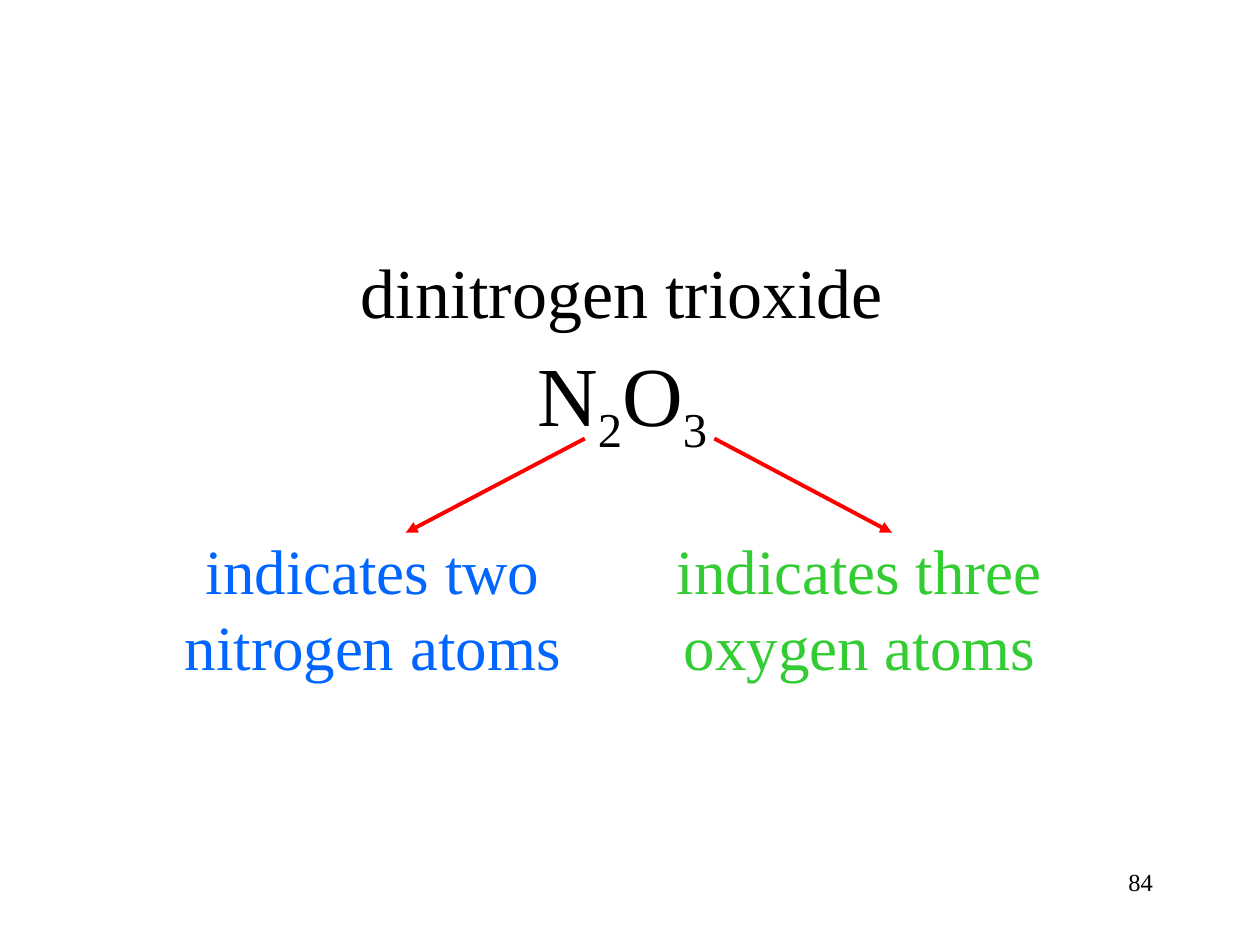
from dataclasses import dataclass

from lxml.etree import SubElement
from pptx import Presentation
from pptx.dml.color import RGBColor
from pptx.enum.shapes import MSO_CONNECTOR
from pptx.enum.text import PP_ALIGN
from pptx.oxml.ns import qn
from pptx.util import Cm, Pt

BLACK, BLUE, GREEN, RED = "000000", "0066FF", "33CC33", "FF0000"


@dataclass
class Label:
    text: str
    left: float
    top: float
    width: float
    height: float
    size: int
    color: str = BLACK
    align: PP_ALIGN = PP_ALIGN.CENTER


@dataclass
class Arrow:
    x1: float
    y1: float
    x2: float
    y2: float


def paint(part, color: str) -> None:
    part.rgb = RGBColor.from_string(color)


def add_label(slide, label: Label):
    box = slide.shapes.add_textbox(
        Cm(label.left), Cm(label.top), Cm(label.width), Cm(label.height))
    frame = box.text_frame
    frame.word_wrap = True
    line = frame.paragraphs[0]
    line.text = label.text
    line.alignment = label.align
    for run in line.runs:
        style(run, label)
    return line


def style(run, label: Label) -> None:
    run.font.name = "Times New Roman"
    run.font.size = Pt(label.size)
    paint(run.font.color, label.color)


def add_formula(slide, label: Label) -> None:
    """Draw a chemical formula with its digits as subscripts."""
    line = add_label(slide, label)
    line.text = ""
    for sign in label.text:
        run = line.add_run()
        run.text = sign
        style(run, label)
        if sign.isdigit():
            run.font._element.set("baseline", "-25000")


def add_arrow(slide, arrow: Arrow) -> None:
    link = slide.shapes.add_connector(
        MSO_CONNECTOR.STRAIGHT,
        Cm(arrow.x1), Cm(arrow.y1), Cm(arrow.x2), Cm(arrow.y2))
    link.line.width = Pt(2.25)
    paint(link.line.color, RED)
    SubElement(link.line._get_or_add_ln(), qn("a:tailEnd"), type="triangle")
    SubElement(link._element.spPr, qn("a:effectLst"))


# Compound name, meaning of each subscript, page number
LABELS = [
    Label("dinitrogen trioxide", 4.88, 4.88, 15.32, 1.96, 40),
    Label("indicates two\vnitrogen atoms", 2.74, 10.59, 9.55, 3.3, 36, BLUE),
    Label("indicates three\voxygen atoms", 12.22, 10.59, 10.21, 3.3, 36, GREEN),
    Label("84", 18.21, 17.35, 5.28, 1.27, 14, align=PP_ALIGN.RIGHT),
]
FORMULA = Label("N2O3", 9.32, 6.78, 6.45, 2.29, 48)

# From each subscript down to its meaning
ARROWS = [
    Arrow(11.79, 8.84, 8.18, 10.74),
    Arrow(14.4, 8.84, 17.98, 10.74),
]


def main() -> None:
    deck = Presentation()
    deck.slide_width, deck.slide_height = Cm(25.4), Cm(19.05)
    slide = deck.slides.add_slide(deck.slide_layouts[6])
    for label in LABELS:
        add_label(slide, label)
    add_formula(slide, FORMULA)
    for arrow in ARROWS:
        add_arrow(slide, arrow)
    deck.save("out.pptx")


if __name__ == "__main__":
    main()
